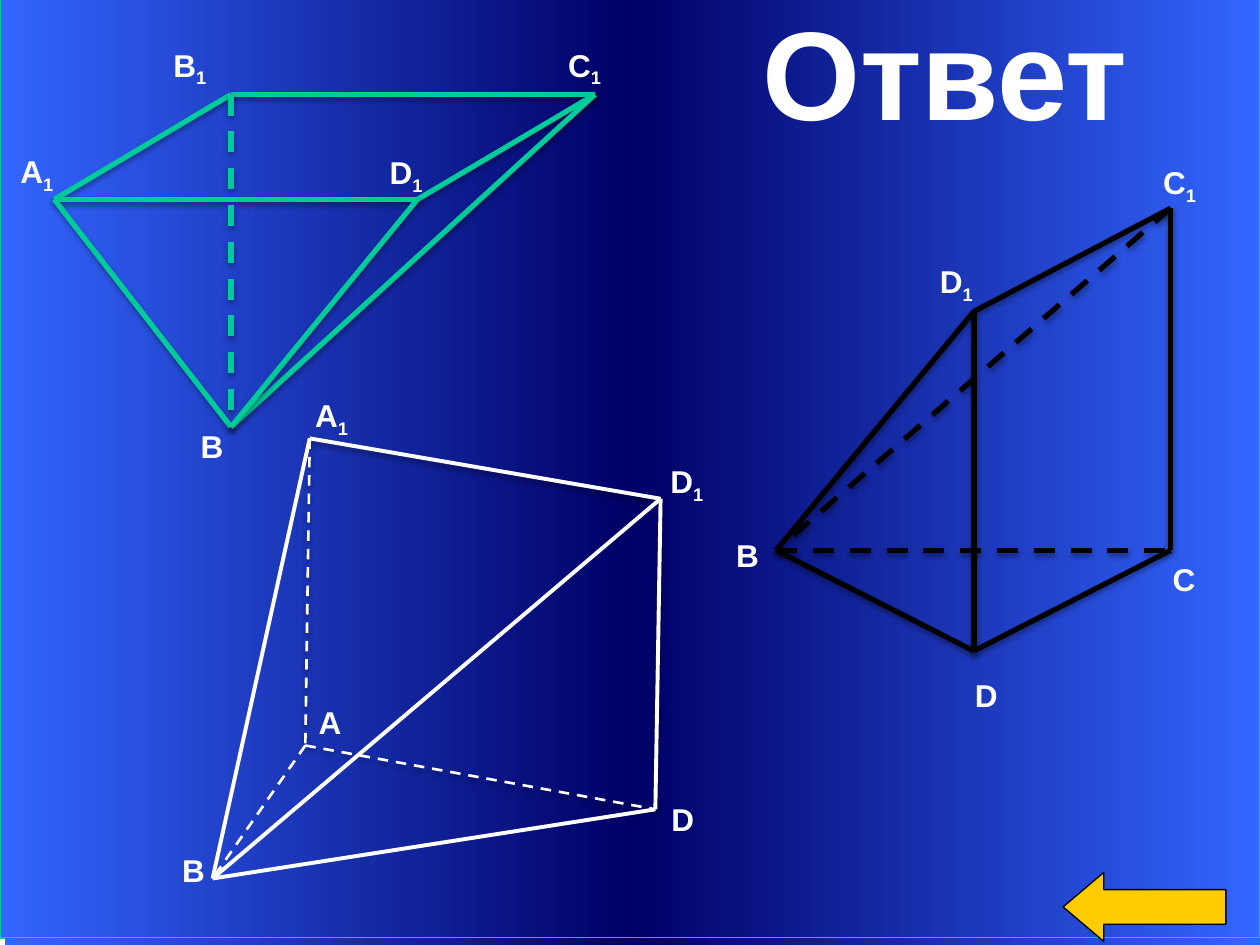
import copy
from dataclasses import dataclass

import lxml.etree
import pptx
import pptx.dml.color
import pptx.enum.dml
import pptx.enum.shapes
import pptx.enum.text
import pptx.oxml.ns
import pptx.util

Pt = pptx.util.Pt
RGBColor = pptx.dml.color.RGBColor
qn = pptx.oxml.ns.qn

BLUE = RGBColor(0x33, 0x66, 0xFF)
NAVY = RGBColor(0x00, 0x00, 0x66)
GREEN = RGBColor(0x00, 0xCC, 0x99)
YELLOW = RGBColor(0xFF, 0xCC, 0x00)
BLACK = RGBColor(0x00, 0x00, 0x00)
WHITE = RGBColor(0xFF, 0xFF, 0xFF)

FONT = "Arial"
LABEL_WIDTH, INDEXED_LABEL_WIDTH, LABEL_HEIGHT = 27.4, 34.6, 29


@dataclass(frozen=True)
class Edge:
    start: str
    end: str
    hidden: bool = False
    shadow: bool = True


@dataclass(frozen=True)
class Label:
    letter: str
    index: str
    left: float
    top: float


@dataclass(frozen=True)
class Solid:
    color: RGBColor
    width: float
    hidden_width: float
    shadow_opacity: int
    vertices: dict[str, tuple[float, float]]
    edges: list[Edge]
    labels: list[Label]


SOLIDS = [
    Solid(
        GREEN, 3, 3, 35,
        {"A1": (31, 114), "B1": (132, 54), "C1": (340, 54), "D1": (238.5, 114), "B": (132, 244)},
        [
            Edge("B1", "C1"), Edge("A1", "B1"), Edge("D1", "C1"), Edge("A1", "D1"),
            Edge("A1", "B"), Edge("B", "C1"), Edge("B", "D1"), Edge("B1", "B", hidden=True),
        ],
        [
            Label("А", "1", 4.5, 83.5), Label("С", "1", 317.5, 22.5), Label("D", "1", 215.5, 84),
            Label("B", "1", 92, 22.5), Label("B", "", 107.5, 240.5),
        ],
    ),
    Solid(
        BLACK, 3, 3, 35,
        {"D": (556.5, 372), "C": (669, 314.5), "C1": (669, 119), "D1": (556.5, 178), "B": (443.5, 314.5)},
        [
            Edge("D", "C"), Edge("D1", "C1"), Edge("D", "B"), Edge("D1", "B"),
            Edge("C1", "B", hidden=True), Edge("D1", "D"), Edge("C1", "C"), Edge("B", "C", hidden=True),
        ],
        [
            Label("D", "1", 530, 146), Label("С", "1", 657.5, 89.5), Label("D", "", 550, 382.5),
            Label("B", "", 413.5, 302.5), Label("С", "", 663, 316.5),
        ],
    ),
    Solid(
        WHITE, 2.25, 1.5, 38,
        {"A1": (177, 250.5), "A": (174.5, 426), "D1": (377.5, 285), "D": (374.5, 462.5), "B": (121.5, 502)},
        [
            Edge("A1", "A", hidden=True), Edge("A1", "D1"), Edge("D1", "D"), Edge("A", "D", hidden=True),
            Edge("A1", "B", shadow=False), Edge("A", "B", hidden=True, shadow=False),
            Edge("B", "D1", shadow=False), Edge("B", "D", shadow=False),
        ],
        [
            Label("В", "", 97, 482.5), Label("D", "", 376.5, 453.5), Label("D", "1", 376, 260.5),
            Label("А", "1", 173, 223), Label("А", "", 175, 398),
        ],
    ),
]


def add_box(shapes, kind, left: float, top: float, width: float, height: float):
    shape = shapes.add_shape(kind, Pt(left), Pt(top), Pt(width), Pt(height))
    shape.shadow.inherit = False
    return shape


def fill_gradient(shape) -> None:
    shape.fill.gradient()
    shape.fill.gradient_angle = 0
    stop_list = shape.element.find(".//" + qn("a:gsLst"))
    stop_list.append(copy.deepcopy(stop_list[0]))
    for stop, position, color in zip(shape.fill.gradient_stops, (0, 0.5, 1), (BLUE, NAVY, BLUE)):
        stop.position = position
        stop.color.rgb = color


def add_edge(group, solid: Solid, edge: Edge) -> None:
    points = [Pt(value) for name in (edge.start, edge.end) for value in solid.vertices[name]]
    connector = group.shapes.add_connector(pptx.enum.shapes.MSO_CONNECTOR.STRAIGHT, *points)
    connector.line.color.rgb = solid.color
    connector.line.width = Pt(solid.hidden_width if edge.hidden else solid.width)
    if edge.hidden:
        connector.line.dash_style = pptx.enum.dml.MSO_LINE.DASH
    effects = lxml.etree.SubElement(connector.element.find(qn("p:spPr")), qn("a:effectLst"))
    if edge.shadow:
        shadow = lxml.etree.SubElement(
            effects, qn("a:outerShdw"),
            blurRad=str(Pt(3.1)), dist=str(Pt(1.8)), dir="5400000", rotWithShape="0",
        )
        shade = lxml.etree.SubElement(shadow, qn("a:srgbClr"), val=str(BLACK))
        lxml.etree.SubElement(shade, qn("a:alpha"), val=str(solid.shadow_opacity * 1000))


def format_paragraph(paragraph, size: float) -> None:
    paragraph.font.name = FONT
    paragraph.font.size = Pt(size)
    paragraph.font.bold = True
    paragraph.font.color.rgb = WHITE


def add_label(group, label: Label) -> None:
    width = INDEXED_LABEL_WIDTH if label.index else LABEL_WIDTH
    box = group.shapes.add_textbox(Pt(label.left), Pt(label.top), Pt(width), Pt(LABEL_HEIGHT))
    box.text_frame.word_wrap = False
    box.text_frame.auto_size = pptx.enum.text.MSO_AUTO_SIZE.SHAPE_TO_FIT_TEXT
    paragraph = box.text_frame.paragraphs[0]
    paragraph.add_run().text = label.letter
    if label.index:
        run = paragraph.add_run()
        run.text = label.index
        run.font._element.set("baseline", "-25000")
    format_paragraph(paragraph, 18)


def add_solid(slide, solid: Solid) -> None:
    group = slide.shapes.add_group_shape()
    for edge in solid.edges:
        add_edge(group, solid, edge)
    for label in solid.labels:
        add_label(group, label)


def format_title(title) -> None:
    title.left, title.top, title.width, title.height = Pt(400), Pt(0), Pt(280), Pt(80)
    frame = title.text_frame
    frame.text = "Ответ"
    frame.word_wrap = False
    frame.auto_size = pptx.enum.text.MSO_AUTO_SIZE.NONE
    frame.vertical_anchor = pptx.enum.text.MSO_ANCHOR.MIDDLE
    frame.margin_top = frame.margin_bottom = Pt(0)
    frame.paragraphs[0].alignment = pptx.enum.text.PP_ALIGN.CENTER
    format_paragraph(frame.paragraphs[0], 72)


def main() -> None:
    presentation = pptx.Presentation()
    presentation.slide_width, presentation.slide_height = Pt(720), Pt(540)
    slide = presentation.slides.add_slide(presentation.slide_layouts[5])
    title = slide.shapes.title
    format_title(title)

    kinds = pptx.enum.shapes.MSO_SHAPE
    backdrop = add_box(slide.shapes, kinds.RECTANGLE, 0, -5, 720, 541)
    fill_gradient(backdrop)
    backdrop.line.color.rgb = GREEN
    backdrop.line.width = Pt(0.75)
    strip = add_box(slide.shapes, kinds.RECTANGLE, 3, 536, 720, 4)
    fill_gradient(strip)
    strip.line.fill.background()
    for shape in (backdrop, strip):
        title.element.addprevious(shape.element)

    arrow = add_box(slide.shapes, kinds.LEFT_ARROW, 607.5, 498.5, 93, 39.5)
    arrow.adjustments[1] = 0.59
    arrow.fill.solid()
    arrow.fill.fore_color.rgb = YELLOW
    arrow.line.color.rgb = BLACK
    arrow.line.width = Pt(0.75)

    for solid in SOLIDS:
        add_solid(slide, solid)
    presentation.save("out.pptx")


if __name__ == "__main__":
    main()
